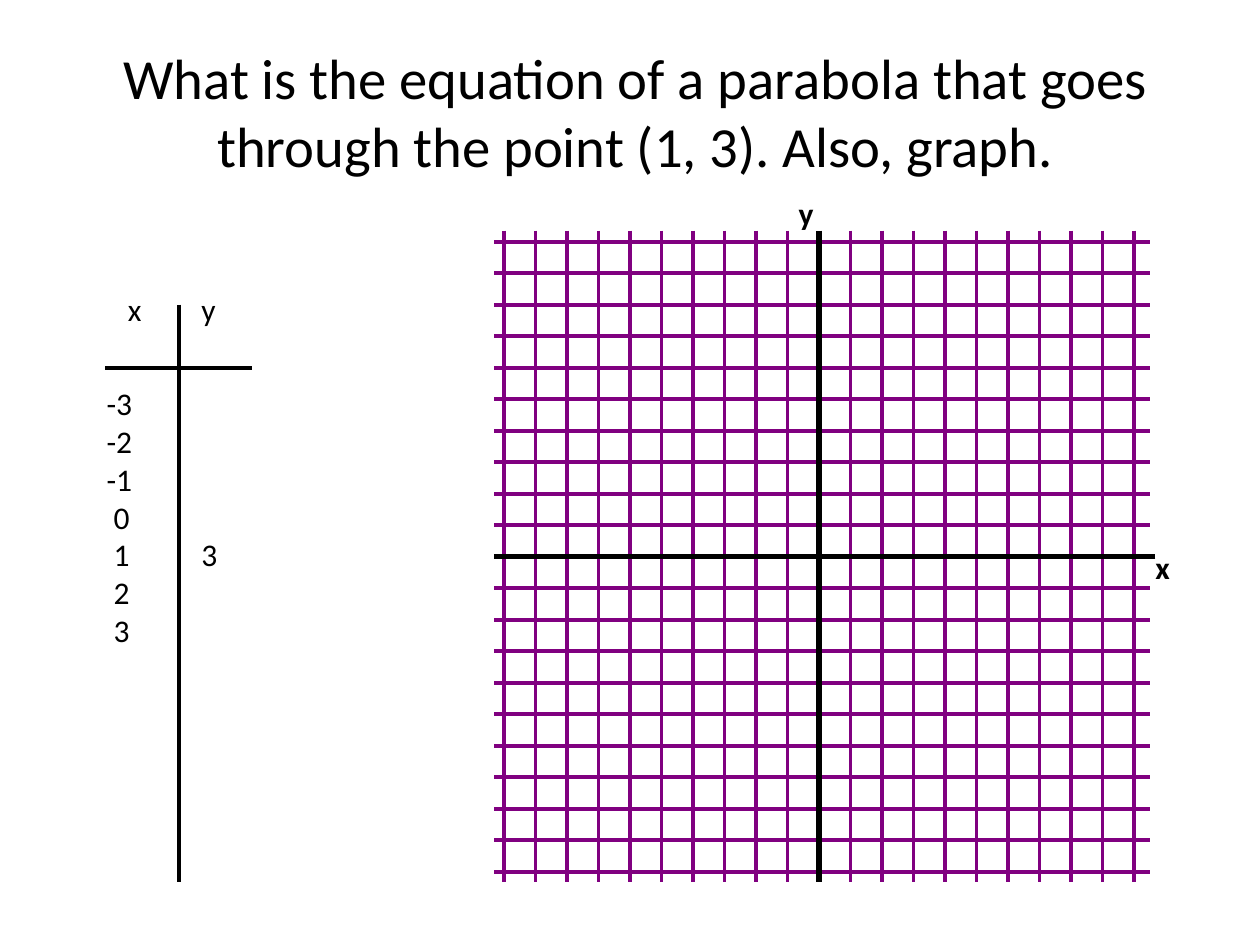
from dataclasses import dataclass

from lxml.etree import SubElement
from pptx import Presentation
from pptx.dml.color import RGBColor
from pptx.enum.shapes import MSO_CONNECTOR as Connector
from pptx.enum.text import MSO_ANCHOR as Anchor, PP_ALIGN as Align
from pptx.oxml.ns import qn
from pptx.util import Cm, Pt

FONT = "Calibri"
BLACK = "000000"
PURPLE = "800080"

# Coordinate grid, in centimetres
ORIGIN_X, ORIGIN_Y = 16.51, 11.22
UNITS = 10
STEP = 6.35 / UNITS
GRID_LEFT, GRID_RIGHT = 9.95, 23.18
GRID_TOP, GRID_BOTTOM = 4.65, 17.78
AXIS_RIGHT = 23.29

# Table of values, in centimetres
VALUES_TOP = 7.62
ROW_HEIGHT = 0.76
X_VALUES = ["-3", "-2", "-1", " 0", " 1", " 2", " 3"]
KNOWN_ROW = X_VALUES.index(" 1")


@dataclass
class Line:
    x1: float
    y1: float
    x2: float
    y2: float
    color: str = BLACK
    weight: float = 2.25


@dataclass
class Label:
    lines: list[str]
    left: float
    top: float
    width: float
    height: float
    size: float = 18
    bold: bool = False
    align: Align = Align.LEFT
    anchor: Anchor = Anchor.TOP


def set_color(color_format, hex_color: str) -> None:
    color_format.rgb = RGBColor.from_string(hex_color)


def draw_line(shapes, line: Line) -> None:
    connector = shapes.add_connector(
        Connector.STRAIGHT, Cm(line.x1), Cm(line.y1), Cm(line.x2), Cm(line.y2))
    connector.line.fill.solid()
    set_color(connector.line.fill.fore_color, line.color)
    connector.line.width = Pt(line.weight)
    SubElement(connector._element.spPr, qn("a:effectLst"))


def draw_label(shapes, label: Label) -> None:
    box = shapes.add_textbox(
        Cm(label.left), Cm(label.top), Cm(label.width), Cm(label.height))
    frame = box.text_frame
    frame.word_wrap = True
    frame.vertical_anchor = label.anchor
    frame.text = "\n".join(label.lines)
    for paragraph in frame.paragraphs:
        paragraph.alignment = label.align
        paragraph.font.name = FONT
        paragraph.font.size = Pt(label.size)
        paragraph.font.bold = label.bold
        set_color(paragraph.font.color, BLACK)


def draw_grid(shapes) -> None:
    """Draw the purple grid, then the two axes and their names on top."""
    offsets = [n * STEP for n in range(-UNITS, UNITS + 1) if n != 0]
    for offset in offsets:
        x, y = ORIGIN_X + offset, ORIGIN_Y + offset
        draw_line(shapes, Line(x, GRID_TOP, x, GRID_BOTTOM, PURPLE))
        draw_line(shapes, Line(GRID_RIGHT, y, GRID_LEFT, y, PURPLE))
    draw_line(shapes, Line(AXIS_RIGHT, ORIGIN_Y, GRID_LEFT, ORIGIN_Y, weight=3))
    draw_line(shapes, Line(ORIGIN_X, GRID_TOP, ORIGIN_X, GRID_BOTTOM, weight=3))
    draw_label(shapes, Label(["x"], 23.04, 10.92, 0.94, 1.27, bold=True))
    draw_label(shapes, Label(["y"], 15.85, 3.78, 0.94, 1.27, bold=True))


def draw_values(shapes) -> None:
    """Draw the x-y table of values with its two rules."""
    draw_line(shapes, Line(3.6, 6.14, 3.6, GRID_BOTTOM))
    draw_line(shapes, Line(2.12, 7.41, 5.08, 7.41))
    draw_label(shapes, Label(["x"], 2.33, 5.72, 1.06, 1.6))
    draw_label(shapes, Label(["y"], 3.81, 5.72, 1.06, 1.6))
    draw_label(shapes, Label(X_VALUES, 1.9, VALUES_TOP, 1.45, 9.73))
    draw_label(shapes, Label(
        ["3"], 3.81, VALUES_TOP + KNOWN_ROW * ROW_HEIGHT, 2.54, 1.02))


def main() -> None:
    presentation = Presentation()
    presentation.slide_width = Cm(25.4)
    presentation.slide_height = Cm(19.05)
    slide = presentation.slides.add_slide(presentation.slide_layouts[6])

    draw_grid(slide.shapes.add_group_shape().shapes)
    draw_label(slide.shapes, Label(
        ["What is the equation of a parabola that goes through the point (1, 3). "
         "Also, graph."],
        1.06, 0.64, 23.5, 3.18, size=32.4, align=Align.CENTER, anchor=Anchor.MIDDLE))
    draw_values(slide.shapes)
    presentation.save("out.pptx")


if __name__ == "__main__":
    main()
